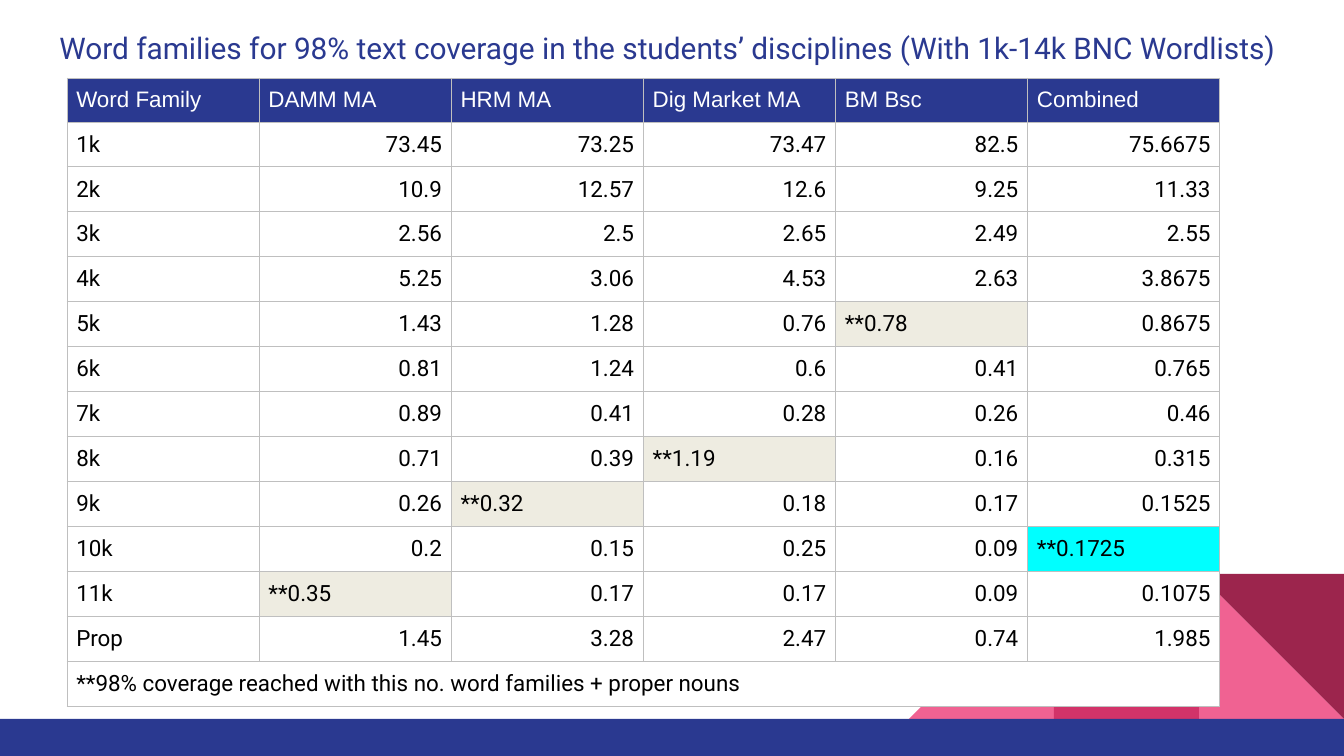
"""Build a slide with a table of word-family coverage by discipline."""
from lxml import etree
from pptx import Presentation, util as u
from pptx.dml.color import RGBColor
from pptx.enum import shapes, text
from pptx.oxml.ns import qn

PX = 914400 / 134.4
C = {"navy": "2A3990", "pink": "F06292", "rose": "D23369", "wine": "9C254D",
     "white": "FFFFFF", "black": "000000", "grid": "BFBFBF",
     "reached": "EEECE1", "combined": "00FFFF"}
TITLE = ("Word families for 98% text coverage in the students’ disciplines "
         "(With 1k-14k BNC Wordlists)")
HEADER = ["Word Family", "DAMM MA", "HRM MA", "Dig Market MA", "BM Bsc", "Combined"]
ROWS = [
    ["1k", "73.45", "73.25", "73.47", "82.5", "75.6675"],
    ["2k", "10.9", "12.57", "12.6", "9.25", "11.33"],
    ["3k", "2.56", "2.5", "2.65", "2.49", "2.55"],
    ["4k", "5.25", "3.06", "4.53", "2.63", "3.8675"],
    ["5k", "1.43", "1.28", "0.76", "**0.78", "0.8675"],
    ["6k", "0.81", "1.24", "0.6", "0.41", "0.765"],
    ["7k", "0.89", "0.41", "0.28", "0.26", "0.46"],
    ["8k", "0.71", "0.39", "**1.19", "0.16", "0.315"],
    ["9k", "0.26", "**0.32", "0.18", "0.17", "0.1525"],
    ["10k", "0.2", "0.15", "0.25", "0.09", "**0.1725"],
    ["11k", "**0.35", "0.17", "0.17", "0.09", "0.1075"],
    ["Prop", "1.45", "3.28", "2.47", "0.74", "1.985"],
]
NOTE = "**98% coverage reached with this no. word families + proper nouns"


def px(n):
    """Turn pixels into EMU."""
    return u.Emu(round(n * PX))


def rgb(name):
    """Look up a named colour."""
    return RGBColor.from_string(C[name])


def style(p, font, size, color):
    """Set the font of a whole paragraph."""
    p.font.name, p.font.size = font, u.Pt(size)
    p.font.color.rgb = rgb(color)


def add_block(s, kind, x, y, w, h, color):
    """Add a flat shape without outline."""
    sp = s.shapes.add_shape(kind, px(x), px(y), px(w), px(h))
    sp.shadow.inherit = False
    sp.fill.solid()
    sp.fill.fore_color.rgb = rgb(color)
    sp.line.fill.background()
    return sp


def add_footer(s, x, y, w, h, tile):
    """Draw the bottom bar with a row of tiles standing on its right end."""
    kind = shapes.MSO_SHAPE
    left, mid, right = (x + w - n * tile for n in (3, 2, 1))
    top = y - tile
    add_block(s, kind.RIGHT_TRIANGLE, right, top, tile, tile, "pink")
    slope = add_block(s, kind.RIGHT_TRIANGLE, left, top, tile, tile, "pink")
    slope._element.spPr.find(qn("a:xfrm")).set("flipH", "1")
    add_block(s, kind.RECTANGLE, mid, top, tile, tile, "rose")
    add_block(s, kind.RIGHT_TRIANGLE, right, top, tile, tile, "wine").rotation = 180
    add_block(s, kind.RECTANGLE, x, y, w, h, "navy")


def add_title(s, x, y, w, h):
    """Place and format the title placeholder."""
    sp = s.shapes.title
    sp.left, sp.top, sp.width, sp.height = px(x), px(y), px(w), px(h)
    tf = sp.text_frame
    tf.text = TITLE
    tf.word_wrap = True
    tf.auto_size = text.MSO_AUTO_SIZE.NONE
    tf.vertical_anchor = text.MSO_ANCHOR.TOP
    tf.margin_left = tf.margin_right = tf.margin_top = tf.margin_bottom = u.Inches(0.1)
    p = tf.paragraphs[0]
    p.alignment = text.PP_ALIGN.LEFT
    style(p, "Roboto", 16, "navy")


def add_borders(cell):
    """Draw thin grid lines on all four sides of a cell."""
    pr = cell._tc.get_or_add_tcPr()
    for i, side in enumerate(("lnL", "lnR", "lnT", "lnB")):
        ln = etree.Element(qn(f"a:{side}"), w=str(u.Pt(0.5)))
        fill = etree.SubElement(ln, qn("a:solidFill"))
        etree.SubElement(fill, qn("a:srgbClr"), val=C["grid"])
        pr.insert(i, ln)


def fill_cell(cell, value, row, col):
    """Write and format one table cell."""
    header, marked = row == 0, value.startswith("**") and col > 0
    cell.text = value
    cell.margin_left = cell.margin_right = cell.margin_top = cell.margin_bottom = u.Pt(5)
    p = cell.text_frame.paragraphs[0]
    style(p, "Arial" if header else "Roboto", 12, "white" if header else "black")
    if col and not header and not marked:
        p.alignment = text.PP_ALIGN.RIGHT
    color = "navy" if header else "white"
    if marked:
        color = "combined" if HEADER[col] == "Combined" else "reached"
    cell.fill.solid()
    cell.fill.fore_color.rgb = rgb(color)
    add_borders(cell)


def add_coverage_table(s, x, y, w, row_h):
    """Add the coverage table with a merged note row at its foot."""
    n = len(HEADER)
    data = [HEADER, *ROWS, [NOTE] + [""] * (n - 1)]
    table = s.shapes.add_table(len(data), n, px(x), px(y), px(w),
                               px(row_h * len(data))).table
    for col in table.columns:
        col.width = px(w / n)
    for i, values in enumerate(data):
        table.rows[i].height = px(row_h)
        for j, value in enumerate(values):
            fill_cell(table.cell(i, j), value, i, j)
    last = len(data) - 1
    table.cell(last, 0).merge(table.cell(last, n - 1))


def main():
    """Build and save the presentation."""
    prs = Presentation()
    prs.slide_width, prs.slide_height = px(1344), px(756)
    s = prs.slides.add_slide(prs.slide_layouts[5])
    add_footer(s, 0, 719, 1344, 37, 145)
    add_title(s, 46, 16, 1253, 89)
    add_coverage_table(s, 67, 78, 1153, 44)
    prs.save("out.pptx")


if __name__ == "__main__":
    main()
